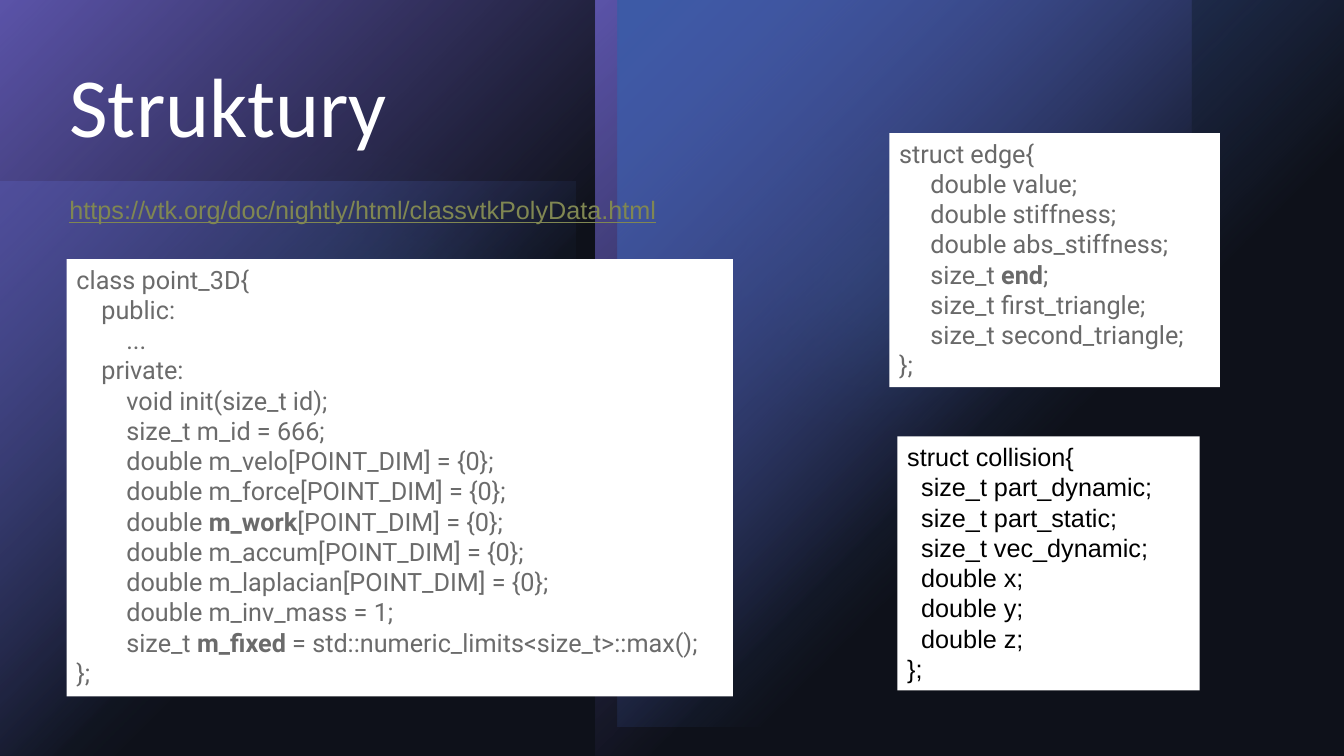
from lxml import etree
from pptx import Presentation
from pptx.dml.color import RGBColor
from pptx.enum import shapes, text
from pptx.oxml import parse_xml
from pptx.oxml.ns import qn
from pptx.util import Inches, Pt

NS = "http://schemas.openxmlformats.org/drawingml/2006/main"

POINT_CODE = """class point_3D{
    public:
        ...
    private:
        void init(size_t id);
        size_t m_id = 666;
        double m_velo[POINT_DIM] = {0};
        double m_force[POINT_DIM] = {0};
        double **m_work**[POINT_DIM] = {0};
        double m_accum[POINT_DIM] = {0};
        double m_laplacian[POINT_DIM] = {0};
        double m_inv_mass = 1;
        size_t **m_fixed** = std::numeric_limits<size_t>::max();
};"""

EDGE_CODE = """struct edge{
     double value;
     double stiffness;
     double abs_stiffness;
     size_t **end**;
     size_t first_triangle;
     size_t second_triangle;
};"""

COLLISION_CODE = """struct collision{
  size_t part_dynamic;
  size_t part_static;
  size_t vec_dynamic;
  double x;
  double y;
  double z;
};"""


def rgb(color):
    return RGBColor.from_string(color)


def add_panel(s, box, color, kind=shapes.MSO_SHAPE.RECTANGLE):
    sp = s.shapes.add_shape(kind, *map(Inches, box))
    sp.shadow.inherit = False
    sp.line.fill.background()
    sp.fill.solid()
    sp.fill.fore_color.rgb = rgb(color)
    return sp


def set_alpha(sp, percent):
    clr = sp._element.spPr.find(qn("a:solidFill"))[0]
    etree.SubElement(clr, qn("a:alpha"), val=str(percent * 1000))


def add_corner_glow(s, box, color, alpha=100):
    """Rectangle that fades out from its top left corner."""
    sp = add_panel(s, box, color)
    stops = "".join(
        f'<a:gs pos="{pos * 1000}"><a:srgbClr val="{color}">'
        f'<a:alpha val="{a * 1000}"/></a:srgbClr></a:gs>'
        for pos, a in ((0, alpha), (60, 0), (100, 0)))
    gradient = parse_xml(
        f'<a:gradFill xmlns:a="{NS}" rotWithShape="1"><a:gsLst>{stops}</a:gsLst>'
        '<a:path path="circle"><a:fillToRect r="100000" b="100000"/></a:path></a:gradFill>')
    spPr = sp._element.spPr
    spPr.replace(spPr.find(qn("a:solidFill")), gradient)


def add_soft_circle(s, left, top, size, alpha):
    sp = add_panel(s, (left, top, size, size), "30B0E8", shapes.MSO_SHAPE.OVAL)
    set_alpha(sp, alpha)
    effects = sp._element.spPr.find(qn("a:effectLst"))
    etree.SubElement(effects, qn("a:softEdge"), rad=str(Inches(1.39)))


def style(p, font, size, color):
    p.font.name, p.font.size = font, Pt(size)
    p.font.color.rgb = rgb(color)


def add_line(s, box, content, font, size, color):
    tf = s.shapes.add_textbox(*map(Inches, box)).text_frame
    tf.word_wrap = True
    p = tf.paragraphs[0]
    p.text = content
    style(p, font, size, color)
    return p


def add_code(s, box, code, font, color):
    """White box of code; words between ** are bold."""
    tf = add_panel(s, box, "FFFFFF").text_frame
    tf.word_wrap = True
    tf.vertical_anchor = text.MSO_ANCHOR.TOP
    for i, line in enumerate(code.split("\n")):
        p = tf.add_paragraph() if i else tf.paragraphs[0]
        p.alignment = text.PP_ALIGN.LEFT
        style(p, font, 18, color)
        for j, part in enumerate(line.split("**")):
            r = p.add_run()
            r.text = part
            if j % 2:
                r.font.bold = True


def add_backdrop(s):
    s.background.fill.solid()
    s.background.fill.fore_color.rgb = rgb("000000")
    add_corner_glow(s, (0, 1.8, 5.71, 5.71), "4E7AEB", 60)
    add_soft_circle(s, 6.29, 0.43, 4.72, 60)
    add_soft_circle(s, 0, 0.56, 6.94, 20)
    for left in (0, 5.91):
        add_corner_glow(s, (left, 0, 5.91, 7.5), "806EEE")
    add_corner_glow(s, (6.13, 0, 7.21, 7.21), "4E7AEB")
    set_alpha(add_panel(s, (0, 0, 13.33, 7.5), "242C41"), 40)


def main():
    prs = Presentation()
    prs.slide_width, prs.slide_height = Inches(13.33), Inches(7.5)
    s = prs.slides.add_slide(prs.slide_layouts[6])
    add_backdrop(s)
    title = add_line(s, (0.59, 0.59, 12.14, 1.98), "Struktury", "Calibri", 60, "FFFFFF")
    title.line_spacing = 0.9
    add_code(s, (0.66, 2.57, 6.61, 4.34), POINT_CODE, "Roboto", "6B6B6B")
    add_code(s, (8.82, 1.32, 3.28, 2.52), EDGE_CODE, "Roboto", "696969")
    link = add_line(s, (0.59, 1.88, 7.75, 0.4),
                    "https://vtk.org/doc/nightly/html/classvtkPolyData.html",
                    "Arial", 18, "808752")
    link.font.underline = True
    add_code(s, (8.9, 4.33, 3, 2.52), COLLISION_CODE, "Arial", "000000")
    prs.save("out.pptx")


if __name__ == "__main__":
    main()
